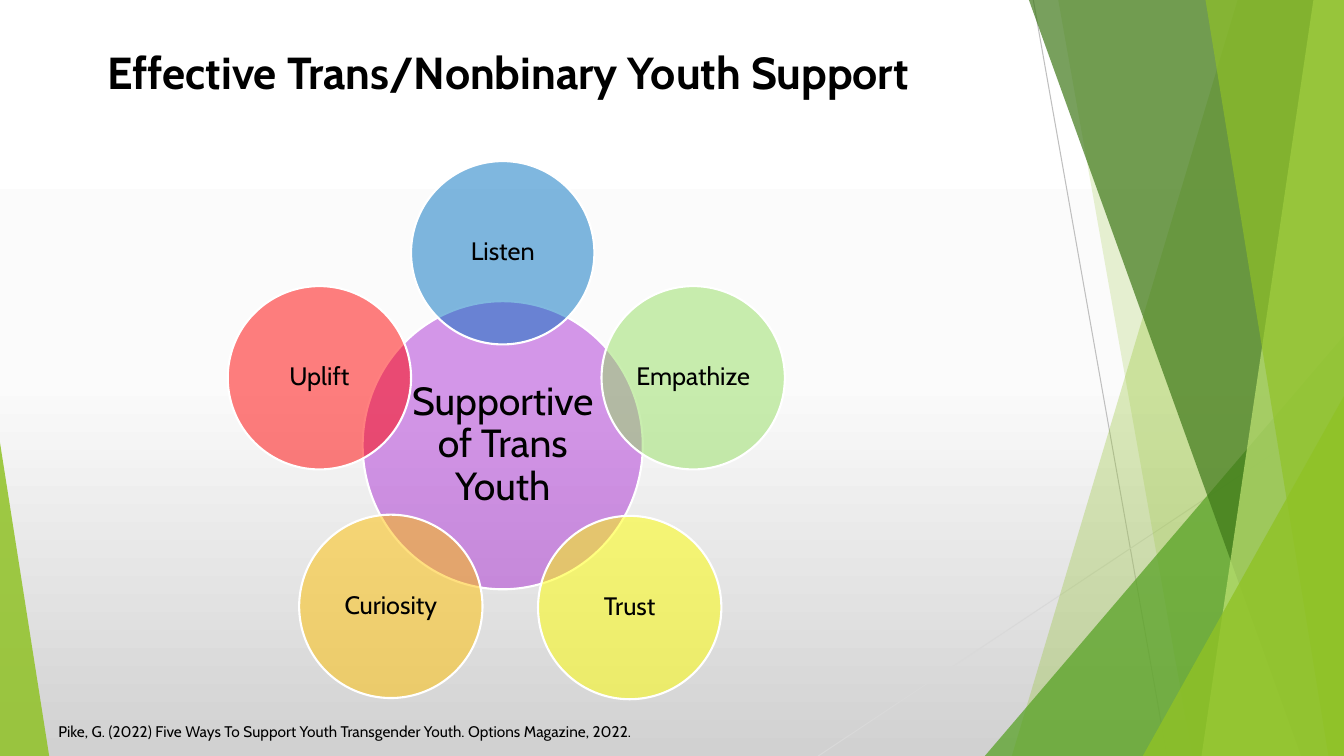
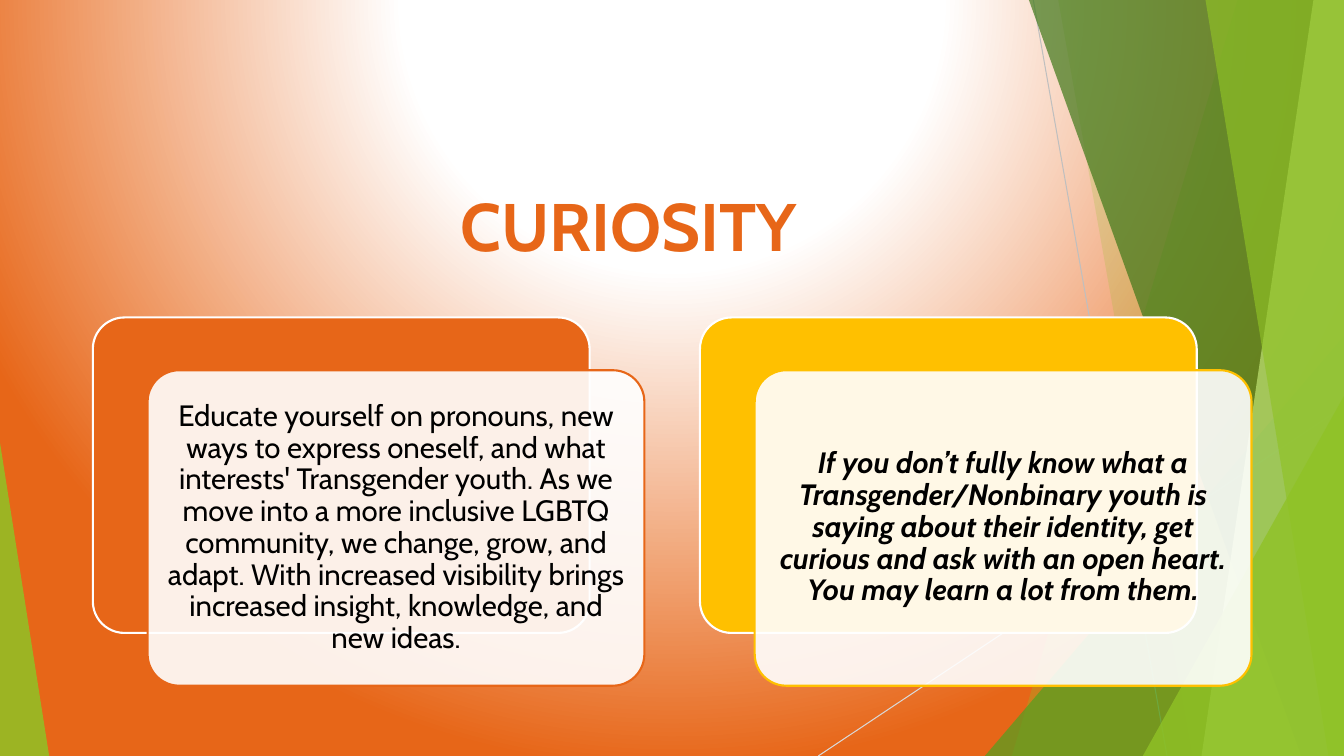
from lxml.etree import SubElement
from pptx import Presentation
from pptx.dml.color import RGBColor
from pptx.enum.shapes import MSO_CONNECTOR as CONN, MSO_SHAPE as SHAPE
from pptx.enum.text import MSO_ANCHOR as ANCHOR, PP_ALIGN as ALIGN
from pptx.oxml import parse_xml
from pptx.oxml.ns import nsdecls, qn
from pptx.util import Cm, Pt

W, H = 33.87, 19.05
FONT = "Cabin"

BLACK = RGBColor(0x00, 0x00, 0x00)
WHITE = RGBColor(0xFF, 0xFF, 0xFF)
NEAR_WHITE = RGBColor(0xFB, 0xFB, 0xFB)
SILVER = RGBColor(0xD1, 0xD1, 0xD1)
LINE_GREY = RGBColor(0xBF, 0xBF, 0xBF)
LINE_PALE = RGBColor(0xD9, 0xD9, 0xD9)
LIME = RGBColor(0x90, 0xC2, 0x26)
GREEN = RGBColor(0x54, 0xA0, 0x21)
FOREST = RGBColor(0x3F, 0x78, 0x19)
PALE_LIME = RGBColor(0xC0, 0xE4, 0x74)
PURPLE = RGBColor(0x99, 0x00, 0xCC)
BLUE = RGBColor(0x00, 0x70, 0xC0)
MINT = RGBColor(0x94, 0xDE, 0x61)
YELLOW = RGBColor(0xFF, 0xFF, 0x00)
AMBER = RGBColor(0xFF, 0xC0, 0x00)
RED = RGBColor(0xFF, 0x00, 0x00)
ORANGE = RGBColor(0xE7, 0x66, 0x18)

LINEAR = '<a:lin ang="5400000" scaled="0"/>'
RADIAL = ('<a:path path="circle"><a:fillToRect l="50000" t="-80000" '
          'r="50000" b="180000"/></a:path>')

RAYS = [
    (26.04, 0, 29.41, H, LINE_GREY),
    (W, 10.24, 20.62, H, LINE_PALE),
]
FACETS = [
    ("band", 31.19, 25.5, LIME, 30),
    ("band", 26.67, 30.05, LIME, 20),
    ("wedge", (24.82, 8.46, W), 1, GREEN, 72),
    ("band", 25.93, 32.79, FOREST, 70),
    ("band", 33.1, 30.28, PALE_LIME, 70),
    ("band", 30.38, 33.48, LIME, 65),
    ("wedge", (28.8, 9.98, W), 1, LIME, 80),
    ("wedge", (0, 11.15, 1.24), 0, LIME, 85),
]
PETALS = [
    ("Listen", 0, -4.85, BLUE),
    ("Empathize", 4.8, -1.7, MINT),
    ("Trust", 3.2, 4.09, YELLOW),
    ("Curiosity", -2.82, 4.06, AMBER),
    ("Uplift", -4.62, -1.7, RED),
]
CARDS = [
    ("Educate yourself on pronouns, new ways to express oneself, and what "
     "interests' Transgender youth. As we move into a more inclusive LGBTQ "
     "community, we change, grow, and adapt. With increased visibility brings "
     "increased insight, knowledge, and new ideas.", ORANGE, {}),
    ("If you don’t fully know what a Transgender/Nonbinary youth is saying "
     "about their identity, get curious and ask with an open heart. You may "
     "learn a lot from them.", AMBER, {"bold": True, "italic": True}),
]


def set_background(slide, stops, direction):
    bg = slide.background
    bg.fill.solid()
    bg_pr = slide.element.cSld.bg.bgPr
    gs = "".join(f'<a:gs pos="{pos * 1000}"><a:srgbClr val="{color}"/></a:gs>'
                 for pos, color in stops)
    grad = parse_xml(f'<a:gradFill {nsdecls("a")} rotWithShape="1">'
                     f'<a:gsLst>{gs}</a:gsLst>{direction}</a:gradFill>')
    bg_pr.replace(bg_pr.find(qn("a:solidFill")), grad)


def paint(sp, color, alpha=100, outline=None):
    sp.shadow.inherit = False
    sp.fill.solid()
    sp.fill.fore_color.rgb = color
    if alpha < 100:
        clr = sp.element.spPr.find(qn("a:solidFill"))[0]
        SubElement(clr, qn("a:alpha")).set("val", str(alpha * 1000))
    if outline is None:
        sp.line.fill.background()
    else:
        sp.line.color.rgb = outline
        sp.line.width = Pt(1.5)


def write(sp, text, size, color=BLACK, align=ALIGN.CENTER, anchor=ANCHOR.MIDDLE,
          inset=None, spacing=None, **style):
    tf = sp.text_frame
    frame = {"word_wrap": True, "vertical_anchor": anchor}
    if inset is not None:
        frame.update({f"margin_{side}": Cm(inset)
                      for side in ("left", "top", "right", "bottom")})
    for name, value in frame.items():
        setattr(tf, name, value)
    p = tf.paragraphs[0]
    p.alignment = align
    p.line_spacing = spacing
    r = p.add_run()
    r.text = text
    for name, value in {"name": FONT, "size": Pt(size), **style}.items():
        setattr(r.font, name, value)
    r.font.color.rgb = color


def add_label(slide, box, text, size, **style):
    write(slide.shapes.add_textbox(*map(Cm, box)), text, size, **style)


def add_title(slide, box, text, size, **style):
    add_label(slide, box, text, size, bold=True, **style)


def add_block(slide, kind, box, *look):
    sp = slide.shapes.add_shape(kind, *map(Cm, box))
    paint(sp, *look)
    return sp


def add_facets(slide):
    for x1, y1, x2, y2, color in RAYS:
        ray = slide.shapes.add_connector(CONN.STRAIGHT, *map(Cm, (x1, y1, x2, y2)))
        ray.line.color.rgb = color
        ray.line.width = Pt(0.75)
        SubElement(ray.element.spPr, qn("a:effectLst"))
    for kind, place, tip, color, alpha in FACETS:
        if kind == "band":
            fb = slide.shapes.build_freeform(Cm(place), 0)
            fb.add_line_segments([(Cm(W), 0), (Cm(W), Cm(H)), (Cm(tip), Cm(H))])
            paint(fb.convert_to_shape(), color, alpha)
        else:
            left, top, right = place
            box = (left, top, right - left, H - top)
            sp = add_block(slide, SHAPE.ISOSCELES_TRIANGLE, box, color, alpha)
            sp.adjustments[0] = tip


def add_flower(slide, left, top, width, height):
    hub = add_block(slide, SHAPE.OVAL, (left, top, width, height),
                    PURPLE, 40, WHITE)
    write(hub, "Supportive of Trans Youth", 28, inset=0.1, spacing=0.9)
    size = 4.62
    x, y = left + (width - size) / 2, top + (height - size) / 2
    for text, dx, dy, color in PETALS:
        petal = add_block(slide, SHAPE.OVAL, (x + dx, y + dy, size, size),
                          color, 50, WHITE)
        write(petal, text, 18, inset=0.08, spacing=0.9)


def add_card(slide, left, top, width, height, text, color, style):
    back = add_block(slide, SHAPE.ROUNDED_RECTANGLE, (left, top, width, height),
                     color, 100, WHITE)
    front = add_block(slide, SHAPE.ROUNDED_RECTANGLE,
                      (left + 1.38, top + 1.33, width, height), WHITE, 90, color)
    for sp in (back, front):
        sp.adjustments[0] = 0.1
    write(front, text, 21, inset=0.23, spacing=0.9, **style)


def new_slide(prs, stops, direction):
    slide = prs.slides.add_slide(prs.slide_layouts[6])
    set_background(slide, stops, direction)
    add_facets(slide)
    return slide


def build_support(prs):
    slide = new_slide(prs, [(0, WHITE), (50, NEAR_WHITE), (100, SILVER)], LINEAR)
    add_flower(slide, 9.14, 7.59, 7.06, 7.26)
    left_top = {"align": ALIGN.LEFT, "anchor": ANCHOR.TOP}
    add_title(slide, (2.46, 0.99, 22.2, 1.63),
              "Effective Trans/Nonbinary Youth Support", 32, **left_top)
    add_label(slide, (1.22, 18.06, 16.26, 0.74),
              "Pike, G. (2022) Five Ways To Support Youth Transgender Youth. "
              "Options Magazine, 2022.", 11, **left_top)


def build_curiosity(prs):
    slide = new_slide(prs, [(0, WHITE), (35, WHITE), (100, ORANGE)], RADIAL)
    add_title(slide, (10.69, 4.34, 9.65, 2.9), "CURIOSITY", 48,
              color=ORANGE, align=ALIGN.RIGHT, spacing=0.9)
    for i, card in enumerate(CARDS):
        add_card(slide, 2.34 + i * 15.3, 8, 12.52, 7.95, *card)


def main():
    prs = Presentation()
    prs.slide_width, prs.slide_height = Cm(W), Cm(H)
    build_support(prs)
    build_curiosity(prs)
    prs.save("out.pptx")


if __name__ == "__main__":
    main()
